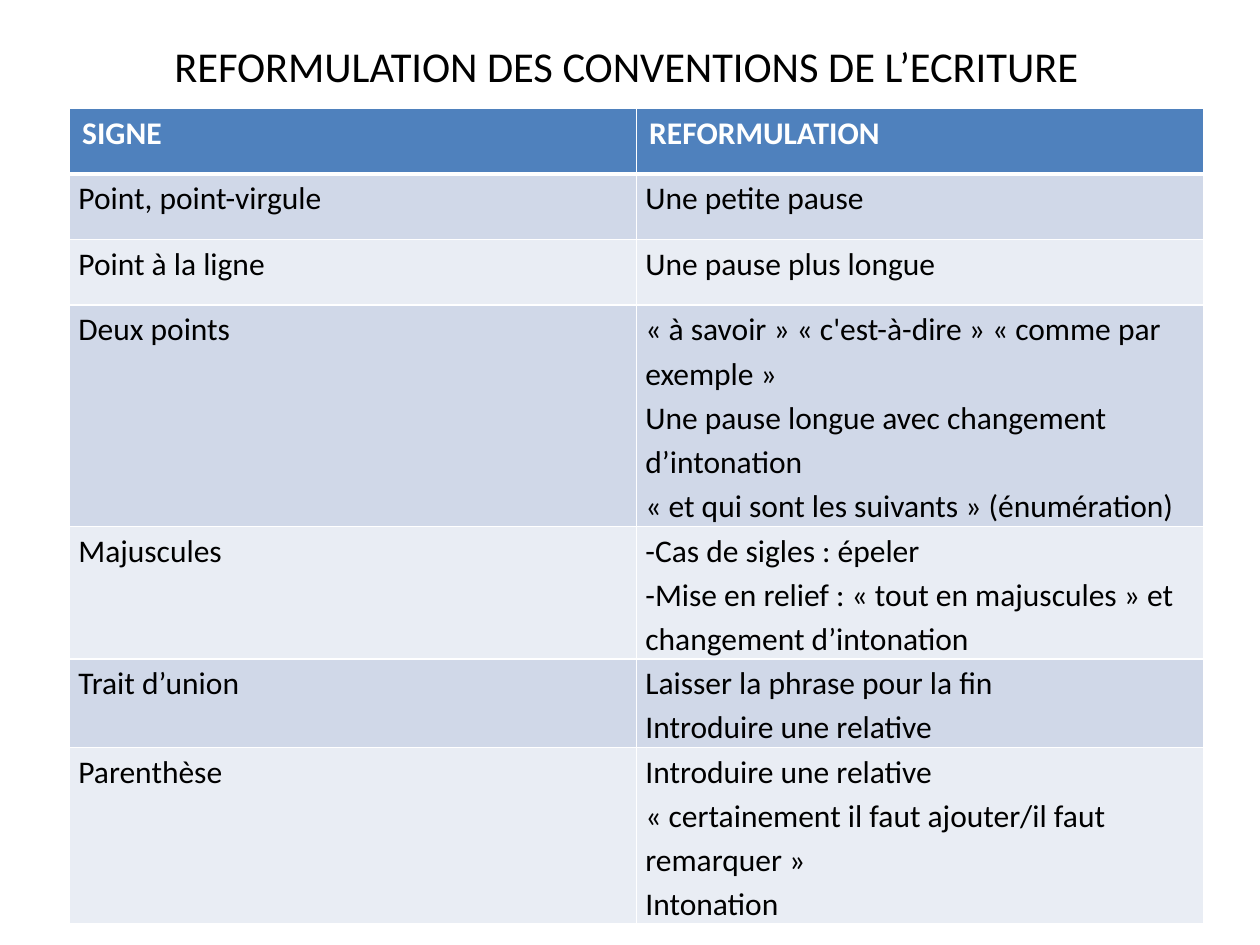
from pptx import Presentation
from pptx.dml.color import RGBColor
from pptx.enum.text import MSO_ANCHOR, PP_ALIGN
from pptx.oxml import parse_xml
from pptx.oxml.ns import nsdecls
from pptx.util import Pt

HEADINGS = ("SIGNE", "REFORMULATION")

# Sign, its reformulations, and the lines the second column takes
SIGNS = [
    ("Point, point-virgule", ["Une petite pause"], 1),
    ("Point à la ligne", ["Une pause plus longue"], 1),
    ("Deux points", ["« à savoir » « c'est-à-dire » « comme par exemple »",
                     "Une pause longue avec changement d’intonation",
                     "« et qui sont les suivants » (énumération)"], 5),
    ("Majuscules", ["-Cas de sigles : épeler",
                    "-Mise en relief : « tout en majuscules » et changement d’intonation"], 3),
    ("Trait d’union", ["Laisser la phrase pour la fin", "Introduire une relative"], 2),
    ("Parenthèse", ["Introduire une relative",
                    "« certainement il faut ajouter/il faut remarquer »",
                    "Intonation"], 4),
]


def color(value):
    return RGBColor.from_string(value)


def apply(target, values):
    for name, value in values.items():
        setattr(target, name, value)


class Page:
    font = "Calibri"
    black, white = "000000", "FFFFFF"
    header, bands = "4F81BD", ("D0D8E8", "E9EDF4")
    line_height, least_height = 25.2, 37.5
    body_margins = {"margin_left": Pt(5), "margin_right": Pt(5),
                    "margin_top": 0, "margin_bottom": 0}

    def __init__(self, deck):
        self.slide = deck.slides.add_slide(deck.slide_layouts[5])

    def add_text(self, para, text, size, ink, bold=False):
        span = para.add_run()
        span.text = text
        apply(span.font, {"name": self.font, "size": Pt(size), "bold": bold})
        span.font.color.rgb = color(ink)

    def title(self, text, left, top, width, height):
        box = self.slide.shapes.title
        apply(box, {"left": Pt(left), "top": Pt(top),
                    "width": Pt(width), "height": Pt(height)})
        apply(box.text_frame, {"vertical_anchor": MSO_ANCHOR.BOTTOM,
                               "margin_bottom": 0, "word_wrap": True})
        para = box.text_frame.paragraphs[0]
        para.alignment = PP_ALIGN.CENTER
        self.add_text(para, text, 24.3, self.black)

    def borders(self, cell, bottom):
        widths = {"lnL": 1, "lnR": 1, "lnT": 1, "lnB": bottom}
        for side, width in widths.items():
            cell._tc.get_or_add_tcPr().append(parse_xml(
                f'<a:{side} {nsdecls("a")} w="{Pt(width)}"><a:solidFill>'
                f'<a:srgbClr val="{self.white}"/></a:solidFill></a:{side}>'))

    def cell(self, cell, lines, fill, ink, bold=False, spacing=None, bottom=1):
        self.borders(cell, bottom)
        cell.fill.solid()
        cell.fill.fore_color.rgb = color(fill)
        frame = cell.text_frame
        for number, line in enumerate(lines):
            para = frame.add_paragraph() if number else frame.paragraphs[0]
            para.line_spacing = spacing
            self.add_text(para, line, 18, ink, bold)

    def table(self, headings, signs, left, top, width):
        heights = [self.least_height] + [
            max(self.least_height, count * self.line_height) for *_, count in signs]
        table = self.slide.shapes.add_table(
            len(heights), len(headings), Pt(left), Pt(top),
            Pt(width), Pt(sum(heights))).table
        for row, height in zip(table.rows, heights):
            row.height = Pt(height)

        # Heading row
        for column, heading in enumerate(headings):
            self.cell(table.cell(0, column), [heading], self.header,
                      self.white, bold=True, bottom=3)

        # Banded rows
        for row, (sign, wordings, _) in enumerate(signs, 1):
            for column, lines in enumerate(([sign], wordings)):
                cell = table.cell(row, column)
                apply(cell, self.body_margins)
                self.cell(cell, lines, self.bands[(row - 1) % 2],
                          self.black, spacing=1.15)


def main():
    deck = Presentation()
    apply(deck, {"slide_width": Pt(720), "slide_height": Pt(540)})
    page = Page(deck)
    page.title("REFORMULATION DES CONVENTIONS DE L’ECRITURE", 34, 0, 648, 52)
    page.table(HEADINGS, SIGNS, 39.8, 62, 648)
    deck.save("out.pptx")


if __name__ == "__main__":
    main()
